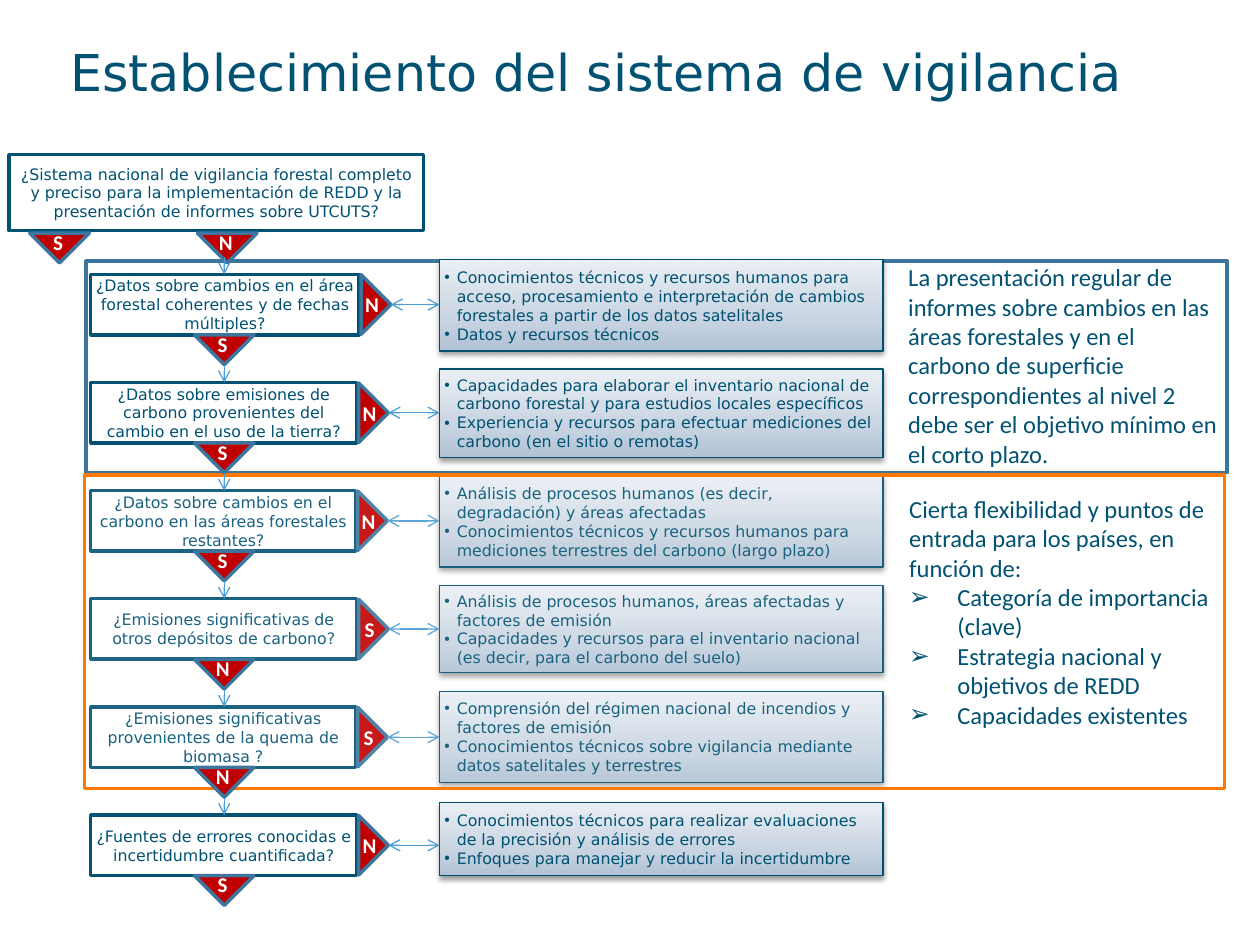
from copy import deepcopy

from lxml import etree
from pptx import Presentation
from pptx import util as u
from pptx.dml.color import RGBColor
from pptx.enum import shapes, text
from pptx.oxml import ns

# Content
TITLE = "Establecimiento del sistema de vigilancia"
START = ("¿Sistema nacional de vigilancia forestal completo y preciso para la "
         "implementación de REDD y la presentación de informes sobre UTCUTS?")
# question, its width, answer below, answer to the right, needs, needs top and height (cm)
STEPS = [
    ("¿Datos sobre cambios en el área forestal coherentes y de fechas múltiples?", 5.41, "S", "N",
     ["Conocimientos técnicos y recursos humanos para acceso, procesamiento e "
      "interpretación de cambios forestales a partir de los datos satelitales",
      "Datos y recursos técnicos"], 5.23, 1.85),
    ("¿Datos sobre emisiones de carbono provenientes del cambio en el uso de la tierra?",
     5.36, "S", "N",
     ["Capacidades para elaborar el inventario nacional de carbono forestal y para "
      "estudios locales específicos",
      "Experiencia y recursos para efectuar mediciones del carbono (en el sitio o remotas)"],
     7.44, 1.78),
    ("¿Datos sobre cambios en el carbono en las áreas forestales restantes?", 5.34, "S", "N",
     ["Análisis de procesos humanos (es decir, degradación) y áreas afectadas",
      "Conocimientos técnicos y recursos humanos para mediciones terrestres del carbono "
      "(largo plazo)"], 9.6, 1.83),
    ("¿Emisiones significativas de otros depósitos de carbono?", 5.36, "N", "S",
     ["Análisis de procesos humanos, áreas afectadas y factores de emisión",
      "Capacidades y recursos para el inventario nacional (es decir, para el carbono del suelo)"],
     11.81, 1.75),
    ("¿Emisiones significativas provenientes de la quema de biomasa ?", 5.34, "N", "S",
     ["Comprensión del régimen nacional de incendios y factores de emisión",
      "Conocimientos técnicos sobre vigilancia mediante datos satelitales y terrestres"],
     13.94, 1.83),
    ("¿Fuentes de errores conocidas e incertidumbre cuantificada?", 5.36, "S", "N",
     ["Conocimientos técnicos para realizar evaluaciones de la precisión y análisis de errores",
      "Enfoques para manejar y reducir la incertidumbre"], 16.18, 1.47),
]
MINIMUM = ["La presentación regular de informes sobre cambios en las áreas forestales y en el "
           "carbono de superficie correspondientes al nivel 2 debe ser el objetivo mínimo en "
           "el corto plazo."]
FLEXIBLE = ["Cierta flexibilidad y puntos de entrada para los países, en función de:",
            "Categoría de importancia (clave)",
            "Estrategia nacional y objetivos de REDD",
            "Capacidades existentes"]

# Colours and grid (cm)
INK, EDGE, RED, ARROW = "005172", "3C769F", "C00000", "4C9CD6"
SHADES = [(0, "B0C2D5"), (0.35, "C8D4E1"), (1, "EAEFF4")]
STEP_LEFT, STEP_TOP, STEP_PITCH, STEP_HEIGHT = 1.83, 5.53, 2.18, 1.22
FLOW_X, NEEDS_LEFT, NEEDS_WIDTH = 4.52, 8.86, 8.94
TIP_BASE, TIP_DEPTH = 1.2, 0.6

deck = Presentation()
deck.slide_width, deck.slide_height = u.Cm(25.4), u.Cm(19.05)
slide = deck.slides.add_slide(deck.slide_layouts[6])


def rgb(value):
    return RGBColor.from_string(value)


def add_xml(parent, tag, **attributes):
    return etree.SubElement(parent, ns.qn(tag), attributes)


def write(shape, lines, size, font="DejaVu Sans", color=INK, align=None, bold=None,
          bullet=None, indent=0, first_bullet=0, inset=None, anchor=None, wrap=True):
    frame = shape.text_frame
    frame.word_wrap = wrap
    frame.vertical_anchor = anchor or text.MSO_ANCHOR.TOP
    if inset is not None:
        frame.margin_left = frame.margin_right = u.Cm(inset)
        frame.margin_top = frame.margin_bottom = u.Cm(inset)
    for i, line in enumerate(lines):
        paragraph = frame.paragraphs[0] if i == 0 else frame.add_paragraph()
        paragraph.text = line
        paragraph.alignment = align or text.PP_ALIGN.LEFT
        if bullet and i >= first_bullet:
            props = paragraph._p.get_or_add_pPr()
            props.set("marL", str(u.Cm(indent)))
            props.set("indent", str(-u.Cm(indent)))
            add_xml(props, "a:buFont", typeface="Arial")
            add_xml(props, "a:buChar", char=bullet)
        paragraph.font.size = u.Pt(size)
        paragraph.font.name = font
        paragraph.font.bold = bold
        paragraph.font.color.rgb = rgb(color)


def add_shape(kind, left, top, width, height, fill, line, weight=2):
    shape = slide.shapes.add_shape(kind, u.Cm(left), u.Cm(top), u.Cm(width), u.Cm(height))
    shape.shadow.inherit = False
    shape.fill.solid()
    shape.fill.fore_color.rgb = rgb(fill)
    shape.line.color.rgb = rgb(line)
    shape.line.width = u.Pt(weight)
    return shape


def add_text(left, top, width, height, lines, size, **style):
    box = slide.shapes.add_textbox(u.Cm(left), u.Cm(top), u.Cm(width), u.Cm(height))
    write(box, lines, size, **style)
    return box


def add_panel(left, top, width, height, line):
    panel = add_shape(shapes.MSO_SHAPE.RECTANGLE, left, top, width, height, "FFFFFF", line)
    white = panel._element.spPr.find(ns.qn("a:solidFill"))[0]
    add_xml(white, "a:alpha", val="10000")


def add_question(left, top, width, height, words):
    box = add_shape(shapes.MSO_SHAPE.RECTANGLE, left, top, width, height, "FFFFFF", INK)
    write(box, [words], 9, align=text.PP_ALIGN.CENTER, inset=0.1,
          anchor=text.MSO_ANCHOR.MIDDLE)


def add_needs(top, height, lines):
    box = add_shape(shapes.MSO_SHAPE.RECTANGLE, NEEDS_LEFT, top, NEEDS_WIDTH, height,
                    "FFFFFF", "004F6F", 0.75)
    box.fill.gradient()
    box.fill.gradient_angle = 90
    stop_list = box._element.spPr.find(".//" + ns.qn("a:gsLst"))
    stop_list.append(deepcopy(stop_list[0]))
    for stop, (position, color) in zip(box.fill.gradient_stops, SHADES):
        stop.position = position
        stop.color.rgb = rgb(color)
    # Soft shadow below the box
    effects = box._element.spPr.find(ns.qn("a:effectLst"))
    shadow = add_xml(effects, "a:outerShdw", blurRad=str(u.Pt(3.1)), dist=str(u.Pt(1.6)),
                     dir="5400000", rotWithShape="0")
    add_xml(add_xml(shadow, "a:srgbClr", val="000000"), "a:alpha", val="38000")
    write(box, lines, 9, bullet="•", indent=0.25, inset=0.1, anchor=text.MSO_ANCHOR.MIDDLE)


def add_answer(center_x, center_y, letter, rotation, letter_dx, letter_dy):
    tip = add_shape(shapes.MSO_SHAPE.ISOSCELES_TRIANGLE, center_x - TIP_BASE / 2,
                    center_y - TIP_DEPTH / 2, TIP_BASE, TIP_DEPTH, RED, EDGE)
    tip.rotation = rotation
    add_text(center_x + letter_dx - 0.4, center_y + letter_dy - 0.38, 0.8, 0.76, [letter], 12,
             font="Calibri", color="FFFFFF", bold=True, align=text.PP_ALIGN.CENTER, wrap=False)


def add_answer_below(center_x, top, letter):
    add_answer(center_x, top + TIP_DEPTH / 2, letter, 180, -0.03, -0.12)


def add_arrow(x1, y1, x2, y2, both_ends=False):
    arrow = slide.shapes.add_connector(shapes.MSO_CONNECTOR.STRAIGHT,
                                       u.Cm(x1), u.Cm(y1), u.Cm(x2), u.Cm(y2))
    arrow.line.color.rgb = rgb(ARROW)
    arrow.line.width = u.Pt(0.75)
    line = arrow.line._get_or_add_ln()
    if both_ends:
        add_xml(line, "a:headEnd", type="arrow")
    add_xml(line, "a:tailEnd", type="arrow")
    add_xml(arrow._element.spPr, "a:effectLst")


# Title and opening question
title = add_text(1.37, 0.64, 23.44, 2.18, [TITLE], 29, inset=0)
title.text_frame.margin_left = u.Cm(0.05)
title.text_frame.paragraphs[0].line_spacing = u.Pt(40)
add_panel(1.73, 5.26, 23.01, 4.27, EDGE)
add_text(18.06, 5.16, 6.76, 4.45, MINIMUM, 14, font="Calibri")
add_question(0.18, 3.12, 8.36, 1.53, START)
add_answer_below(1.2, 4.7, "S")
add_answer_below(4.58, 4.7, "N")

# Steps: question, answer to the right, needs
tops = [STEP_TOP + i * STEP_PITCH for i in range(len(STEPS))]
for top, (question, width, _, side, needs, needs_top, needs_height) in zip(tops, STEPS):
    middle = top + STEP_HEIGHT / 2
    tip_x = STEP_LEFT + width + 0.34
    add_question(STEP_LEFT, top, width, STEP_HEIGHT, question)
    add_answer(tip_x, middle, side, 90, -0.08, 0)
    add_needs(needs_top, needs_height, needs)
    add_arrow(tip_x + TIP_DEPTH / 2, middle, NEEDS_LEFT, middle, both_ends=True)

# Flexible steps panel, over its rows
add_panel(1.7, 9.58, 22.99, 6.32, "FF7900")
add_text(18.08, 9.83, 7.01, 5.05, FLEXIBLE, 14, font="Calibri",
         bullet="➢", indent=0.97, first_bullet=1)

# Downward flow
for top, step in zip(tops, STEPS):
    add_arrow(FLOW_X, top - 0.35, FLOW_X, top)
    add_answer_below(FLOW_X, top + STEP_HEIGHT, step[2])

deck.save("out.pptx")
